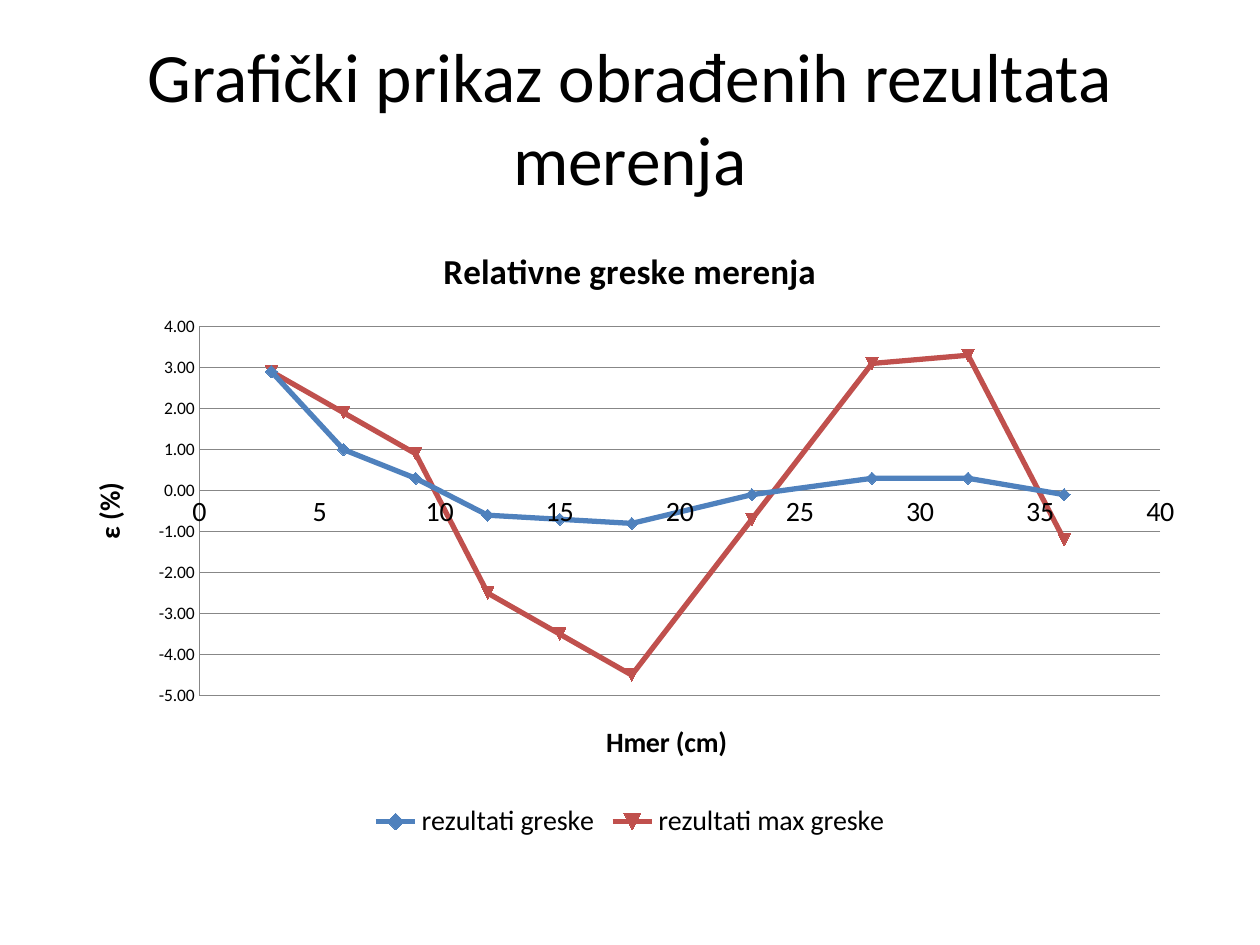
from pptx import Presentation
from pptx.chart.data import XyChartData
from pptx.dml.color import RGBColor
from pptx.enum.chart import XL_CHART_TYPE, XL_LEGEND_POSITION, XL_TICK_MARK
from pptx.enum.text import MSO_ANCHOR, MSO_AUTO_SIZE, PP_ALIGN
from pptx.util import Cm, Pt

SMOOTH = XL_CHART_TYPE.XY_SCATTER_SMOOTH
BOTTOM = XL_LEGEND_POSITION.BOTTOM
NO_TICK = XL_TICK_MARK.NONE

FONT = "Calibri"
COLORS = {"text": "000000", "grid": "878787", "error": "4F81BD", "max": "C0504D"}
TITLE = "Grafički prikaz obrađenih rezultata merenja"
HEADING = "Relativne greske merenja"
DEPTHS = [3, 6, 9, 12, 15, 18, 23, 28, 32, 36]
SERIES = [
    ("rezultati greske", "error",
     [2.9, 1, 0.3, -0.6, -0.7, -0.8, -0.1, 0.3, 0.3, -0.1]),
    ("rezultati max greske", "max",
     [2.9, 1.9, 0.9, -2.5, -3.5, -4.5, -0.7, 3.1, 3.3, -1.2]),
]
# title, low, high, step, tick label size, number format
AXES = [
    ("Hmer (cm)", 0, 40, 5, 16, "General"),
    ("ε (%)", -5, 4, 1, 10, "0.00"),
]


def color(key):
    return RGBColor.from_string(COLORS[key])


def style(font, size, bold=False):
    font.name = FONT
    font.size = Pt(size)
    font.bold = bold
    font.color.rgb = color("text")


def label(frame, text, size):
    frame.text = text
    style(frame.paragraphs[0].runs[0].font, size, True)


def add_title(slide):
    title = slide.shapes.title
    title.left, title.top = Cm(1.27), Cm(0.76)
    title.width, title.height = Cm(22.86), Cm(3.18)
    frame = title.text_frame
    frame.text = TITLE
    frame.word_wrap = True
    frame.auto_size = MSO_AUTO_SIZE.NONE
    frame.vertical_anchor = MSO_ANCHOR.MIDDLE
    para = frame.paragraphs[0]
    para.alignment = PP_ALIGN.CENTER
    style(para.runs[0].font, 39.6)


def add_graph(slide):
    data = XyChartData()
    for name, _, errors in SERIES:
        series = data.add_series(name)
        for depth, error in zip(DEPTHS, errors):
            series.add_data_point(depth, error)
    chart = slide.shapes.add_chart(
        SMOOTH, Cm(1.27), Cm(4.45), Cm(22.86), Cm(12.57), data).chart
    style(chart.font, 10)
    chart.has_title = True
    label(chart.chart_title.text_frame, HEADING, 20)
    chart.chart_title.include_in_layout = False
    chart.has_legend = True
    chart.legend.position = BOTTOM
    chart.legend.include_in_layout = False
    style(chart.legend.font, 16)

    plot = chart.plots[0]
    plot.vary_by_categories = False
    for series, (_, key, _) in zip(plot.series, SERIES):
        series.smooth = True
        series.format.line.width = Pt(3)
        series.format.line.color.rgb = color(key)
        series.marker.size = 7
        series.marker.format.fill.solid()
        series.marker.format.fill.fore_color.rgb = color(key)
        series.marker.format.line.color.rgb = color(key)

    axes = chart.category_axis, chart.value_axis
    for axis, (text, low, high, step, size, form) in zip(axes, AXES):
        label(axis.axis_title.text_frame, text, 16)
        axis.minimum_scale, axis.maximum_scale = low, high
        axis.major_unit = step
        axis.major_tick_mark = axis.minor_tick_mark = NO_TICK
        axis.tick_labels.number_format = form
        axis.tick_labels.number_format_is_linked = False
        style(axis.tick_labels.font, size)
        axis.format.line.color.rgb = color("grid")
        axis.has_major_gridlines = False
    chart.value_axis.has_major_gridlines = True
    chart.value_axis.major_gridlines.format.line.color.rgb = color("grid")


def main():
    deck = Presentation()
    deck.slide_width, deck.slide_height = Cm(25.4), Cm(19.05)
    slide = deck.slides.add_slide(deck.slide_layouts[5])
    add_title(slide)
    add_graph(slide)
    deck.save("out.pptx")


if __name__ == "__main__":
    main()
